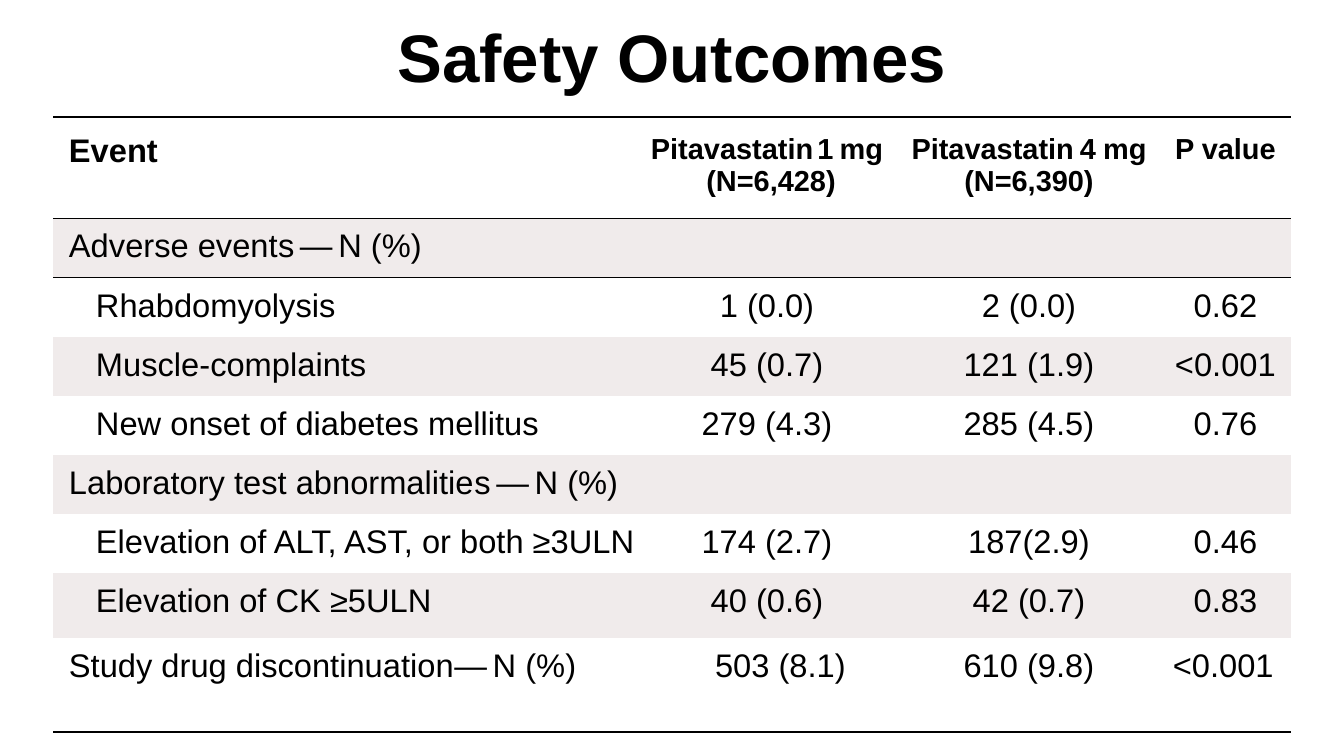
from lxml.etree import fromstring
from pptx import Presentation
from pptx.dml.color import RGBColor
from pptx.enum.text import MSO_ANCHOR as Anchor, PP_ALIGN as Align
from pptx.oxml.ns import nsdecls
from pptx.util import Emu, Pt

PX = 914400 / 134.4
BLACK, WHITE, BAND = "000000", "FFFFFF", "F0EBEB"
PLAIN = "{2D5ABB26-0587-4C30-8999-92F81FD0307C}"
COLS = [583, 262, 262, 131]
ROWS = [97, 57, 58, 58, 58, 57, 58, 63, 94]
SHADED = (1, 3, 5, 7)
DASH = [("—", 3), ("N (%)", 0)]
HEAD = [
    [["Event"]],
    [["Pitavastati", ("n 1 ", -1), ("mg", 0)], [" (N=6,428)"]],
    [["Pitavastati", ("n ", -1), ("4 ", -0.5), ("mg (N=6,390)", 0)]],
    [["P value"]],
]
BODY = [
    [["Adverse event", ("s—", 3), DASH[1]]],
    ["Rhabdomyolysis", "1 (0.0)", "2 (0.0)", "0.62"],
    ["Muscle-complaints", "45 (0.7)", "121 (1.9)", "<0.001"],
    ["New onset of diabetes mellitus", "279 (4.3)", "285 (4.5)", "0.76"],
    [["Laboratory test abnormalitie", ("s—", 3), DASH[1]]],
    ["Elevation of ALT, AST, or both ≥3ULN", "174 (2.7)", "187(2.9)", "0.46"],
    ["Elevation of CK ≥5ULN", "40 (0.6)", "42 (0.7)", "0.83"],
    [["Study drug discontinuation", *DASH], "503 (8.1)", "610 (9.8)", "<0.001"],
]


def px(num):
    """Turn pixels into EMU."""
    return Emu(round(num * PX))


def color(code):
    """Turn a hex string into a colour."""
    return RGBColor.from_string(code)


def put(item, form):
    """Set each format value on an object."""
    for name, value in form.items():
        setattr(item, name, value)


def inset(item, left, top, right, bottom):
    """Set the four margins in pixels."""
    names = ("margin_left", "margin_top", "margin_right", "margin_bottom")
    put(item, dict(zip(names, map(px, (left, top, right, bottom)))))


def write(frame, paras, size, bold, align):
    """Fill a text frame with paragraphs of spaced runs."""
    for num, parts in enumerate(paras):
        para = frame.add_paragraph() if num else frame.paragraphs[0]
        para.alignment = align
        for part in parts:
            text, gap = (part, 0) if isinstance(part, str) else part
            run = para.add_run()
            run.text = text
            put(run.font, {"size": Pt(size), "bold": bold, "name": "Arial"})
            run.font.color.rgb = color(BLACK)
            if gap:
                run.font._element.set("spc", str(round(gap * 100)))


def paint(cell, code):
    """Fill a cell with one colour."""
    cell.fill.solid()
    cell.fill.fore_color.rgb = color(code)


def rule(cell, sides):
    """Draw black borders on the given sides of a cell."""
    props = cell._tc.get_or_add_tcPr()
    for num, side in enumerate(sides):
        props.insert(num, fromstring(
            f'<a:ln{side} {nsdecls("a")} w="12700"><a:solidFill>'
            f'<a:srgbClr val="{BLACK}"/></a:solidFill></a:ln{side}>'))


def title(slide, text):
    """Add the slide heading."""
    box = slide.shapes.add_textbox(px(0), px(8), px(1344), px(95))
    put(box.text_frame, {"word_wrap": True, "vertical_anchor": Anchor.BOTTOM})
    write(box.text_frame, [[text]], 36, True, Align.CENTER)


def header(table):
    """Write the column heads."""
    for col, paras in enumerate(HEAD):
        cell = table.cell(0, col)
        inset(cell, 0 if col else 16, 16, 0, 16)
        write(cell.text_frame, paras, 15.5 if col else 17.5, True,
              Align.CENTER if col else Align.LEFT)


def body(table):
    """Write the event rows."""
    last = len(BODY)
    for row, line in enumerate(BODY, 1):
        foot = 16 if row == last - 1 else 10
        for col, text in enumerate(line):
            cell = table.cell(row, col)
            side = 13 if col else 16
            inset(cell, side, 10, 13 if col else 0, foot)
            left = col == 0 or (row, col) == (last, 3)
            plain = isinstance(text, str)
            write(cell.text_frame, [[text] if plain else text], 17.5, False,
                  Align.LEFT if left else Align.CENTER)
            if col == 0 and plain:
                props = cell.text_frame.paragraphs[0]._p.get_or_add_pPr()
                props.set("marL", str(px(27)))
    inset(table.cell(last, 1), 27, 10, 0, 10)
    table.cell(5, 0).merge(table.cell(5, 1))


def grid(slide):
    """Add the outcome table."""
    frame = slide.shapes.add_table(len(ROWS), len(COLS), px(53), px(117),
                                   px(sum(COLS)), px(sum(ROWS)))
    table = frame.table
    put(table, {"first_row": False, "horz_banding": False})
    table._tbl.tblPr[0].text = PLAIN
    for col, width in zip(table.columns, COLS):
        col.width = px(width)
    sides = {0: "TB", 1: "T", len(BODY): "B"}
    for num, (row, height) in enumerate(zip(table.rows, ROWS)):
        row.height = px(height)
        for cell in row.cells:
            paint(cell, BAND if num in SHADED else WHITE)
            rule(cell, sides.get(num, ""))
    header(table)
    body(table)


def main():
    """Build and save the slide."""
    deck = Presentation()
    put(deck, {"slide_width": px(1344), "slide_height": px(756)})
    slide = deck.slides.add_slide(deck.slide_layouts[6])
    title(slide, "Safety Outcomes")
    grid(slide)
    deck.save("out.pptx")


if __name__ == "__main__":
    main()
